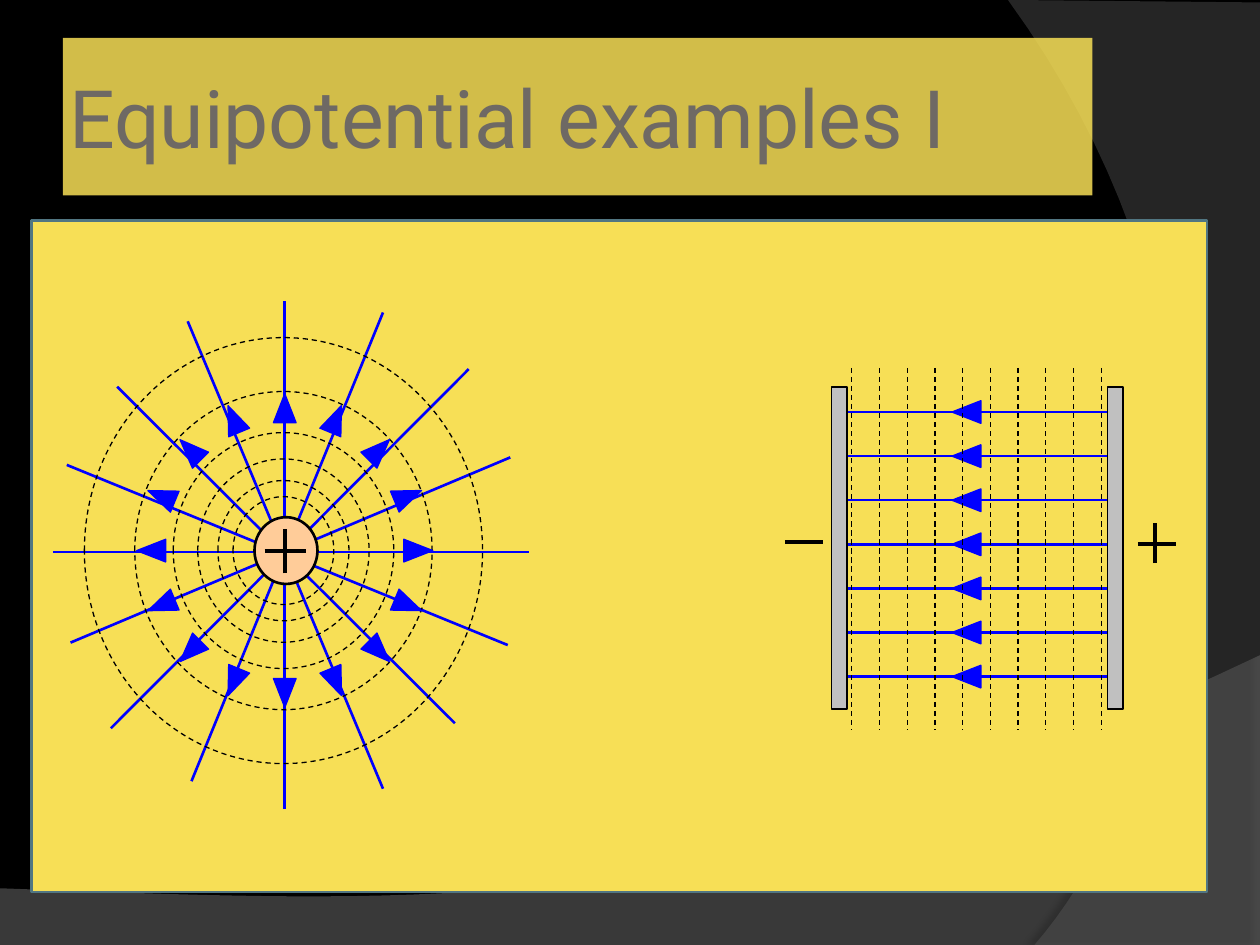
import math

from lxml import etree
from pptx import Presentation
from pptx.dml.color import RGBColor
from pptx.enum.dml import MSO_LINE
from pptx.enum.shapes import MSO_CONNECTOR, MSO_SHAPE
from pptx.enum.text import MSO_ANCHOR, PP_ALIGN
from pptx.oxml.ns import qn
from pptx.util import Inches, Pt

RECTANGLE = MSO_SHAPE.RECTANGLE
ELLIPSE = MSO_SHAPE.OVAL
TRIANGLE = MSO_SHAPE.ISOSCELES_TRIANGLE
STRAIGHT = MSO_CONNECTOR.STRAIGHT
DASH = MSO_LINE.DASH
MIDDLE = MSO_ANCHOR.MIDDLE
LEFT = PP_ALIGN.LEFT

BLACK, BLUE, YELLOW = "000000", "0000FF", "F7DF56"


def colour(code):
    return RGBColor.from_string(code)


def bezier(start, control_a, control_b, end, steps=40):
    points = []
    for step in range(steps + 1):
        t = step / steps
        weights = ((1 - t) ** 3, 3 * t * (1 - t) ** 2, 3 * t * t * (1 - t), t ** 3)
        curve = (start, control_a, control_b, end)
        points.append(tuple(sum(w * p[axis] for w, p in zip(weights, curve))
                            for axis in (0, 1)))
    return points


class FieldSlide:
    title_font = {"name": "Roboto", "size": Pt(46)}
    title_frame = {"word_wrap": True, "vertical_anchor": MIDDLE,
                   "margin_left": Inches(0.05), "margin_right": Inches(0.05),
                   "margin_top": Inches(0.05), "margin_bottom": Inches(0.05)}

    def __init__(self, deck):
        self.slide = deck.slides.add_slide(deck.slide_layouts[6])
        self.shapes = self.slide.shapes
        background = self.slide.background.fill
        background.solid()
        background.fore_color.rgb = colour(BLACK)

    def outline(self, line, code, width, dash=None):
        line.color.rgb = colour(code)
        line.width = Pt(width)
        if dash:
            line.dash_style = dash

    def paint(self, shape, fill=None, line=None, opacity=100):
        shape.shadow.inherit = False
        if fill:
            shape.fill.solid()
            shape.fill.fore_color.rgb = colour(fill)
        else:
            shape.fill.background()
        if opacity < 100:
            tint = shape.fill._xPr.find(".//" + qn("a:srgbClr"))
            etree.SubElement(tint, qn("a:alpha"), val=str(opacity * 1000))
        if line:
            self.outline(shape.line, *line)
        else:
            shape.line.fill.background()
        return shape

    def box(self, kind, left, top, width, height, **style):
        shape = self.shapes.add_shape(kind, Inches(left), Inches(top),
                                      Inches(width), Inches(height))
        return self.paint(shape, **style)

    def centred(self, kind, x, y, width, height, **style):
        return self.box(kind, x - width / 2, y - height / 2, width, height, **style)

    def line(self, x1, y1, x2, y2, code, width, dash=None):
        connector = self.shapes.add_connector(
            STRAIGHT, Inches(x1), Inches(y1), Inches(x2), Inches(y2))
        self.outline(connector.line, code, width, dash)
        etree.SubElement(connector._element.spPr, qn("a:effectLst"))

    def arrow(self, x, y, heading):
        marker = self.centred(TRIANGLE, x, y, 0.18, 0.23,
                              fill=BLUE, line=(BLUE, 0.75))
        marker.rotation = heading

    def swoosh(self, points, fill, opacity, shadow):
        corners = [(Inches(x), Inches(y)) for x, y in points]
        builder = self.shapes.build_freeform(*corners[0], scale=1)
        builder.add_line_segments(corners[1:], close=True)
        shape = self.paint(builder.convert_to_shape(), fill, opacity=opacity)
        strength, blur, distance, direction = shadow
        effects = shape._element.spPr.find(qn("a:effectLst"))
        cast = etree.SubElement(
            effects, qn("a:outerShdw"), blurRad=str(Pt(blur)),
            dist=str(Pt(distance)), dir=str(direction * 60000))
        shade = etree.SubElement(cast, qn("a:srgbClr"), val=BLACK)
        etree.SubElement(shade, qn("a:alpha"), val=str(strength * 1000))

    def title(self, text):
        banner = self.box(RECTANGLE, 0.5, 0.3, 8.17, 1.25, fill=YELLOW, opacity=85)
        frame = banner.text_frame
        for key, value in self.title_frame.items():
            setattr(frame, key, value)
        paragraph = frame.paragraphs[0]
        paragraph.text = text
        paragraph.alignment = LEFT
        for key, value in self.title_font.items():
            setattr(paragraph.font, key, value)
        paragraph.font.color.rgb = colour("6E6964")


def draw_backdrop(page):
    page.swoosh([(0, 7.51), (10, 7.51)]
                + bezier((10, 5.2), (5.59, 7.29), (3.91, 7.19), (0, 7.05)),
                "7F7F7F", 45, (35, 4, 3.5, 270))
    page.swoosh([(10, 0.02), (10, 7.5)]
                + bezier((8.21, 7.5), (9.35, 6.19), (10.18, 3), (8, 0)),
                "5E5E5E", 40, (45, 4, 4, 180))
    page.box(RECTANGLE, 0.25, 1.75, 9.33, 5.33, fill=YELLOW, line=("517682", 1.5))


def draw_plates(page):
    signs = [(6.23, 4.3, 6.53, 4.3), (9.03, 4.32, 9.33, 4.32), (9.17, 4.47, 9.17, 4.15)]
    for stroke in signs:
        page.line(*stroke, BLACK, 2.25)
    for row in range(7):
        y = 3.27 + 0.35 * row
        page.line(6.66, y, 8.86, y, BLUE, 1.5)
        page.arrow(7.67, y, 270)
    for plate_left in (6.6, 8.79):
        page.box(RECTANGLE, plate_left, 3.07, 0.12, 2.56, fill="C0C0C0", line=(BLACK, 1))
    for column in range(10):
        x = 6.76 + 0.22 * column
        page.line(x, 2.92, x, 5.79, BLACK, 0.75, DASH)


def draw_point_charge(page):
    x, y = 2.26, 4.37
    field_lines = [
        (0.42, 4.38, 4.2, 4.38), (2.26, 2.39, 2.26, 6.42),
        (0.88, 5.78, 3.72, 2.93), (0.93, 3.07, 3.61, 5.74),
        (0.56, 5.1, 4.05, 3.63), (1.49, 2.55, 3.04, 6.26),
        (1.52, 6.2, 3.04, 2.48), (0.53, 3.69, 4.03, 5.12),
    ]
    for field_line in field_lines:
        page.line(*field_line, BLUE, 1.5)
    page.centred(ELLIPSE, x + 0.01, y, 0.5, 0.53, fill="FFCC99", line=(BLACK, 1.5))
    page.line(2.1, y, 2.43, y, BLACK, 2.25)
    page.line(x, 4.55, x, 4.2, BLACK, 2.25)
    for ring in (0.8, 1.04, 1.36, 1.75, 2.36, 3.16):
        page.centred(ELLIPSE, 2.25, y, ring, ring * 1.07, line=(BLACK, 0.75, DASH))
    for direction in range(16):
        heading = 22.5 * direction
        angle = math.radians(heading)
        page.arrow(x + 1.06 * math.sin(angle), y - 1.13 * math.cos(angle), heading)


def main():
    deck = Presentation()
    deck.slide_width, deck.slide_height = Inches(10), Inches(7.5)
    page = FieldSlide(deck)
    draw_backdrop(page)
    page.title("Equipotential examples I")
    draw_plates(page)
    draw_point_charge(page)
    deck.save("out.pptx")


if __name__ == "__main__":
    main()
